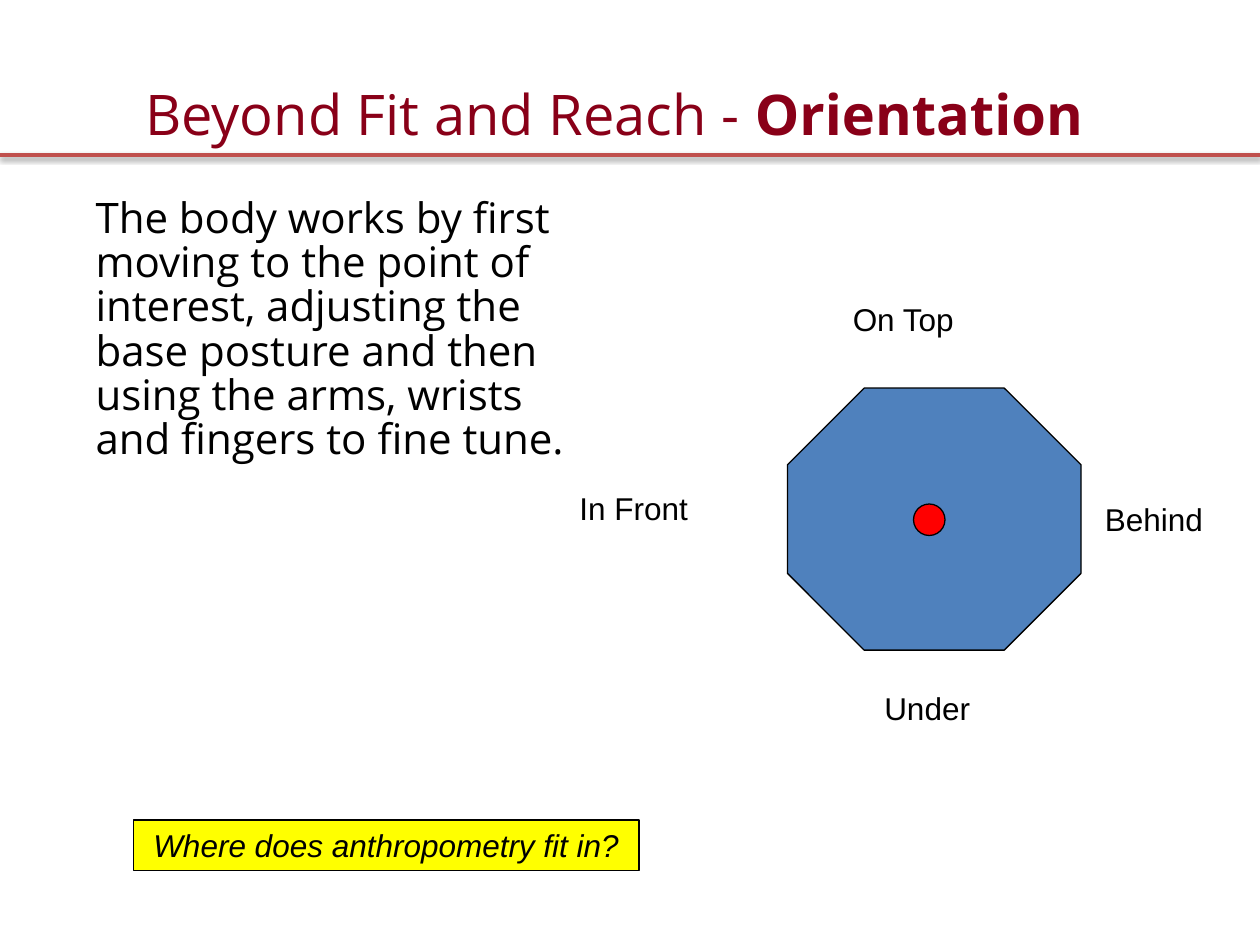
from lxml import etree
from pptx import Presentation
from pptx.dml.color import RGBColor
from pptx.enum.shapes import MSO_CONNECTOR, MSO_SHAPE
from pptx.enum.text import MSO_ANCHOR, PP_ALIGN
from pptx.oxml.ns import qn
from pptx.util import Inches, Pt

LEFT, MID = PP_ALIGN.LEFT, PP_ALIGN.CENTER
TOP, CENTER = MSO_ANCHOR.TOP, MSO_ANCHOR.MIDDLE
OCTAGON, OVAL, RECT = MSO_SHAPE.OCTAGON, MSO_SHAPE.OVAL, MSO_SHAPE.RECTANGLE

# Content: boxes are left, top, width, height in inches
TITLE = [("Beyond Fit and Reach - ", False), ("Orientation", True)]
BODY = ("The body works by first moving to the point of interest, adjusting "
        "the base posture and then using the arms, wrists and fingers to "
        "fine tune.")
LABELS = [
    ("On Top", 6.67, 2.33, 1.83),
    ("In Front", 4.5, 3.83, 1.33),
    ("Behind", 8.67, 3.92, 1.33),
    ("Under", 6.92, 5.42, 1.17),
]
PROMPT = "Where does anthropometry fit in?"

THEME = {
    "rule": "C0504D", "body": "4F81BD", "point": "FF0000",
    "prompt": "FFFF00", "ink": "000000",
    "title": {"name": "Open Sans", "size": Pt(32), "color": "890018"},
    "text": {"name": "Open Sans", "size": Pt(24), "color": "000000"},
    "label": {"name": "Arial", "size": Pt(18), "color": "000000"},
}


def rgb(key):
    return RGBColor.from_string(THEME.get(key, key))


def style(font, look):
    for key, val in look.items():
        if key == "color":
            font.color.rgb = rgb(val)
        else:
            setattr(font, key, val)


def write(shape, runs, look, align=LEFT, anchor=TOP):
    frame = shape.text_frame
    frame.word_wrap = True
    frame.vertical_anchor = anchor
    para = frame.paragraphs[0]
    para.alignment = align
    for text, bold in runs:
        run = para.add_run()
        run.text = text
        style(run.font, look | {"bold": bold})
    return para


def text_box(slide, box, runs, look, **opts):
    shape = slide.shapes.add_textbox(*map(Inches, box))
    return write(shape, runs, look, **opts)


def draw(slide, kind, box, fill, width=0.75):
    shape = slide.shapes.add_shape(kind, *map(Inches, box))
    shape.shadow.inherit = False
    shape.fill.solid()
    shape.fill.fore_color.rgb = rgb(fill)
    shape.line.color.rgb = rgb("ink")
    shape.line.width = Pt(width)
    return shape


def add_rule(slide, width, top):
    rule = slide.shapes.add_connector(
        MSO_CONNECTOR.STRAIGHT, 0, Inches(top), width, Inches(top))
    rule.line.color.rgb = rgb("rule")
    rule.line.width = Pt(2)
    # Soft shadow straight below the rule
    props = rule._element.spPr
    effects = etree.SubElement(props, qn("a:effectLst"))
    shade = etree.SubElement(effects, qn("a:outerShdw"), {
        "blurRad": str(Pt(3.1)), "dist": str(Pt(1.6)),
        "dir": "5400000", "rotWithShape": "0"})
    color = etree.SubElement(shade, qn("a:srgbClr"), val=THEME["ink"])
    etree.SubElement(color, qn("a:alpha"), val="38000")


def main():
    deck = Presentation()
    deck.slide_width, deck.slide_height = Inches(10), Inches(7.5)
    slide = deck.slides.add_slide(deck.slide_layouts[6])

    # Heading and body text
    add_rule(slide, deck.slide_width, 1.23)
    text_box(slide, (0.75, 0.56, 8.25, 0.67), TITLE, THEME["title"],
             align=MID, anchor=CENTER)
    para = text_box(slide, (0.66, 1.52, 4.11, 2.6), [(BODY, False)],
                    THEME["text"])
    para.line_spacing = 0.88

    # Object with its point of interest and the sides around it
    body = draw(slide, OCTAGON, (6.25, 3.08, 2.33, 2.08), "body")
    body.adjustments[0] = 0.293
    for text, left, top, width in LABELS:
        text_box(slide, (left, top, width, 0.5), [(text, False)],
                 THEME["label"])
    draw(slide, OVAL, (7.25, 4, 0.25, 0.25), "point")

    # Closing question
    prompt = draw(slide, RECT, (1.06, 6.51, 4.01, 0.4), "prompt", 1)
    write(prompt, [(PROMPT, False)], THEME["label"] | {"italic": True},
          align=MID, anchor=CENTER)

    deck.save("out.pptx")


if __name__ == "__main__":
    main()
